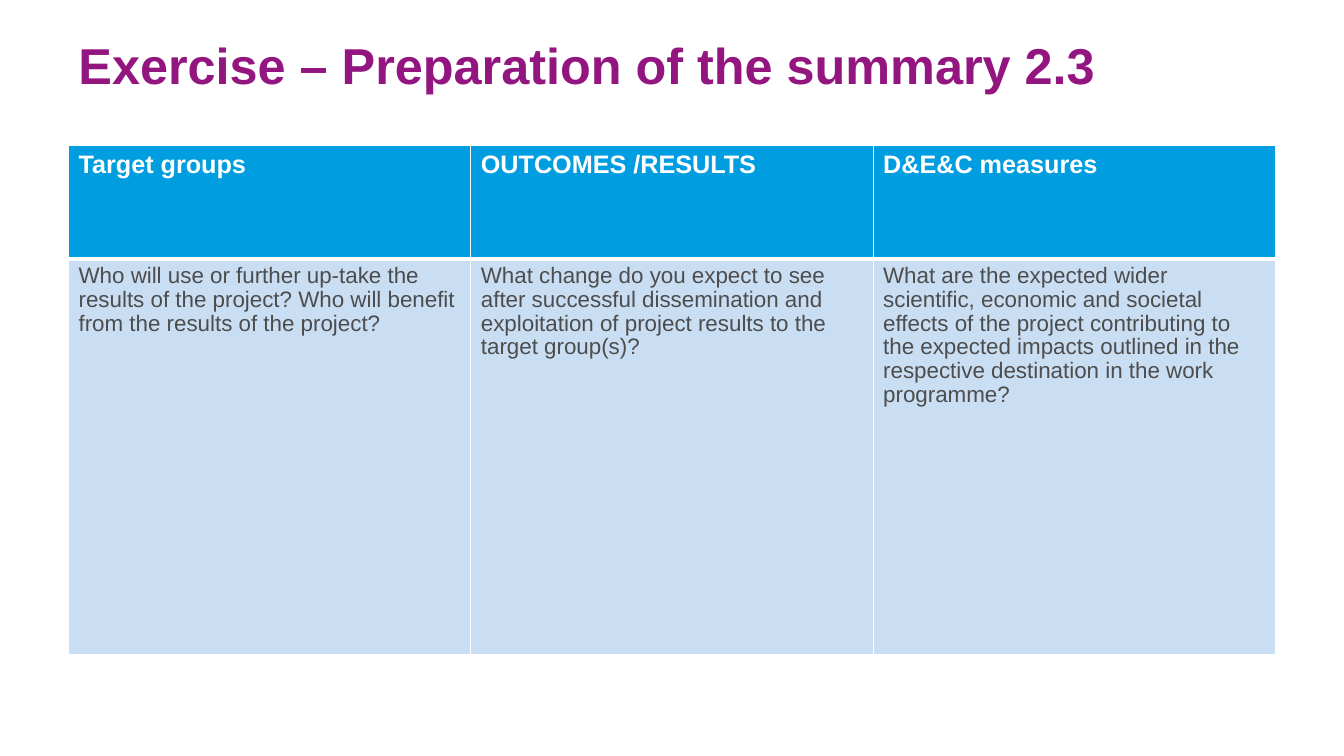
from lxml import etree
from pptx import Presentation
from pptx.dml.color import RGBColor as Rgb
from pptx.enum.text import MSO_ANCHOR as Anchor
from pptx.oxml.ns import qn
from pptx.util import Inches, Pt

COLORS = {"title": "931680", "head": "009EE0", "body": "CADEF3",
          "text": "4D4D4D", "white": "FFFFFF"}
COLUMNS = [
    ("Target groups",
     "Who will use or further up-take the results of the project? "
     "Who will benefit from the results of the project?"),
    ("OUTCOMES /RESULTS",
     "What change do you expect to see after successful dissemination and "
     "exploitation of project results to the target group(s)?"),
    ("D&E&C measures",
     "What are the expected wider scientific, economic and societal effects "
     "of the project contributing to the expected impacts outlined in the "
     "respective destination in the work programme?"),
]


def style(frame, size, color, bold):
    font = frame.paragraphs[0].runs[0].font
    font.name, font.size, font.bold = "Arial", Pt(size), bold
    font.color.rgb = Rgb.from_string(COLORS[color])


def add_title(slide, left, top, width, height):
    box = slide.shapes.add_textbox(
        Inches(left), Inches(top), Inches(width), Inches(height))
    frame = box.text_frame
    frame.word_wrap = True
    frame.vertical_anchor = Anchor.TOP
    frame.margin_bottom = 0
    frame.text = "Exercise – Preparation of the summary 2.3"
    style(frame, 36, "title", True)


def add_borders(cell, bottom):
    """Draw white cell edges; bottom is the lower edge's width in points."""
    props = cell._tc.get_or_add_tcPr()
    edges = {"a:lnL": 1, "a:lnR": 1, "a:lnT": 1, "a:lnB": bottom}
    for spot, (tag, width) in enumerate(edges.items()):
        line = etree.Element(qn(tag), w=str(Pt(width)))
        fill = etree.SubElement(line, qn("a:solidFill"))
        etree.SubElement(fill, qn("a:srgbClr"), val=COLORS["white"])
        props.insert(spot, line)


def fill_cell(cell, text, fill, size, color, bold):
    cell.fill.solid()
    cell.fill.fore_color.rgb = Rgb.from_string(COLORS[fill])
    cell.text_frame.text = text
    style(cell.text_frame, size, color, bold)


def add_grid(slide, left, top, width, height, head=1.13):
    table = slide.shapes.add_table(
        2, len(COLUMNS), Inches(left), Inches(top),
        Inches(width), Inches(height)).table
    table.rows[0].height = Inches(head)
    table.rows[1].height = Inches(height - head)
    for col, (name, question) in enumerate(COLUMNS):
        top_cell, low_cell = table.cell(0, col), table.cell(1, col)
        fill_cell(top_cell, name, "head", 18, "white", True)
        add_borders(top_cell, 3)
        fill_cell(low_cell, question, "body", 16, "text", False)
        low_cell.text_frame.paragraphs[0].line_spacing = 0.96
        add_borders(low_cell, 1)
        # The shared edge keeps the header's thick line
        low_cell._tc.tcPr.find(qn("a:lnT")).set("w", str(Pt(3)))


def main():
    deck = Presentation()
    deck.slide_width, deck.slide_height = Inches(13.33), Inches(7.5)
    slide = deck.slides.add_slide(deck.slide_layouts[6])
    add_title(slide, 0.68, 0.29, 11.97, 1.02)
    add_grid(slide, 0.68, 1.44, 11.97, 5.05)
    deck.save("out.pptx")


if __name__ == "__main__":
    main()
